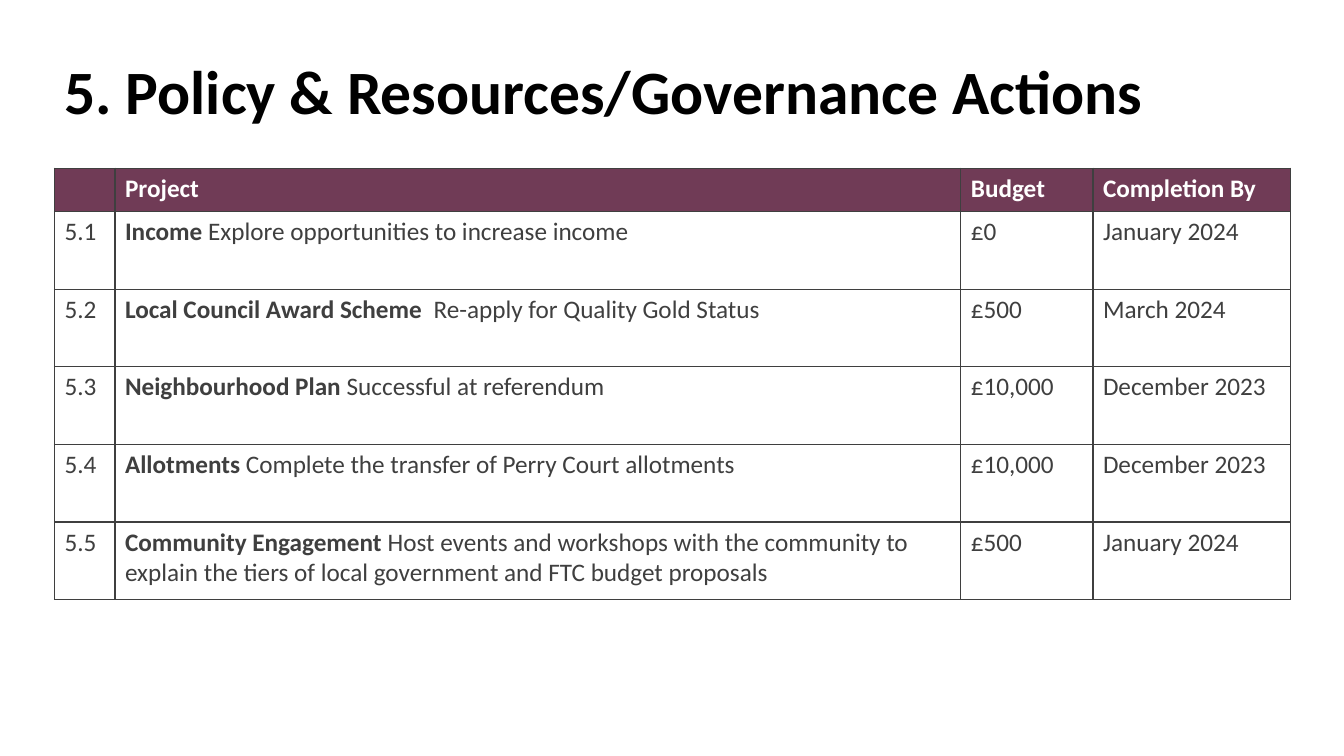
import pptx
import pptx.dml.color
import pptx.enum.text
import pptx.util
from lxml import etree
from pptx.oxml.ns import qn
from pptx.util import Inches

COLORS = {"title": "000000", "header": "703B56", "header_text": "FFFFFF", "body": "3F3F3F"}
FONT = "Calibri"
COLUMN_WIDTHS = [0.6, 8.39, 1.31, 1.96]
HEADER_HEIGHT = 0.43
ROW_HEIGHT = 0.77
HEADINGS = ["", "Project", "Budget", "Completion By"]
PROJECTS = [
    ("Income ", "Explore opportunities to increase income", "£0", "January 2024"),
    ("Local Council Award Scheme ", " Re-apply for Quality Gold Status", "£500", "March 2024"),
    ("Neighbourhood Plan ", "Successful at referendum", "£10,000", "December 2023"),
    ("Allotments ", "Complete the transfer of Perry Court allotments", "£10,000", "December 2023"),
    ("Community Engagement ",
     "Host events and workshops with the community to explain the tiers of local government "
     "and FTC budget proposals", "£500", "January 2024"),
]


def add_run(paragraph, text, size, color, bold=False):
    run = paragraph.add_run()
    run.text = text
    run.font.name = FONT
    run.font.size = pptx.util.Pt(size)
    run.font.bold = bold
    run.font.color.rgb = pptx.dml.color.RGBColor.from_string(COLORS[color])


def add_borders(cell):
    properties = cell._tc.get_or_add_tcPr()
    for side in ("a:lnL", "a:lnR", "a:lnT", "a:lnB"):
        line = etree.SubElement(properties, qn(side), w=str(pptx.util.Pt(1)))
        fill = etree.SubElement(line, qn("a:solidFill"))
        etree.SubElement(fill, qn("a:srgbClr"), val=COLORS["body"])


presentation = pptx.Presentation()
presentation.slide_width = Inches(13.33)
presentation.slide_height = Inches(7.5)
slide = presentation.slides.add_slide(presentation.slide_layouts[6])

title = slide.shapes.add_textbox(Inches(0.54), Inches(0.21), Inches(11.88), Inches(1.45))
title.text_frame.word_wrap = True
title.text_frame.vertical_anchor = pptx.enum.text.MSO_ANCHOR.MIDDLE
title_paragraph = title.text_frame.paragraphs[0]
title_paragraph.line_spacing = 0.9
add_run(title_paragraph, "5. Policy & Resources/Governance Actions", 44, "title", bold=True)

table_height = HEADER_HEIGHT + ROW_HEIGHT * len(PROJECTS)
table = slide.shapes.add_table(
    len(PROJECTS) + 1, len(COLUMN_WIDTHS),
    Inches(0.54), Inches(1.67), Inches(sum(COLUMN_WIDTHS)), Inches(table_height),
).table
for column, width in zip(table.columns, COLUMN_WIDTHS):
    column.width = Inches(width)
for row in table.rows:
    row.height = Inches(ROW_HEIGHT)
table.rows[0].height = Inches(HEADER_HEIGHT)

for cell in table.iter_cells():
    add_borders(cell)
    cell.fill.background()

for column_index, heading in enumerate(HEADINGS):
    cell = table.cell(0, column_index)
    cell.fill.solid()
    cell.fill.fore_color.rgb = pptx.dml.color.RGBColor.from_string(COLORS["header"])
    if heading:
        add_run(cell.text_frame.paragraphs[0], heading, 18, "header_text", bold=True)

for number, (name, action, budget, completion) in enumerate(PROJECTS, start=1):
    paragraphs = [table.cell(number, index).text_frame.paragraphs[0]
                  for index in range(len(COLUMN_WIDTHS))]
    add_run(paragraphs[0], f"5.{number}", 18, "body")
    add_run(paragraphs[1], name, 18, "body", bold=True)
    add_run(paragraphs[1], action, 18, "body")
    add_run(paragraphs[2], budget, 18, "body")
    add_run(paragraphs[3], completion, 18, "body")

presentation.save("out.pptx")
